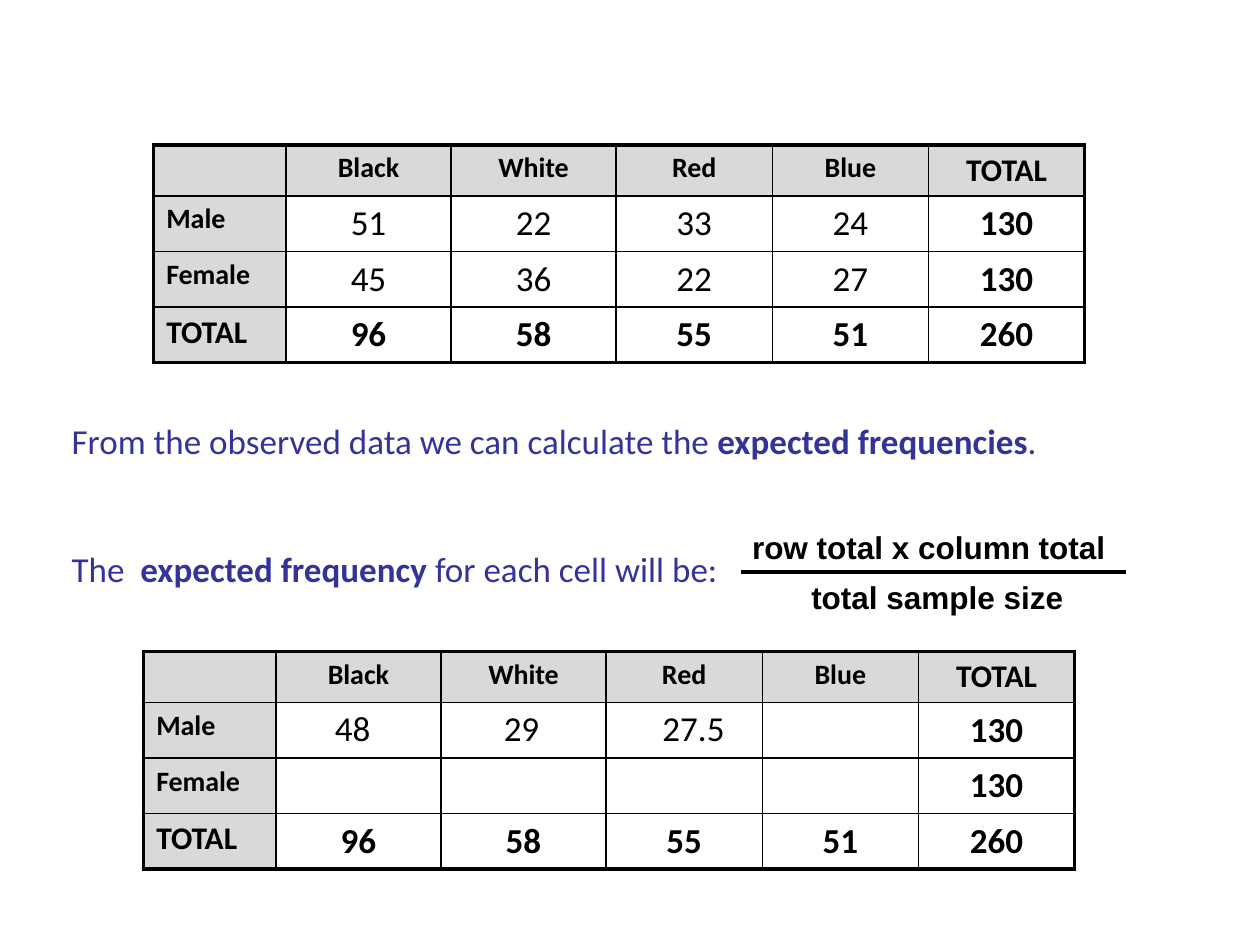
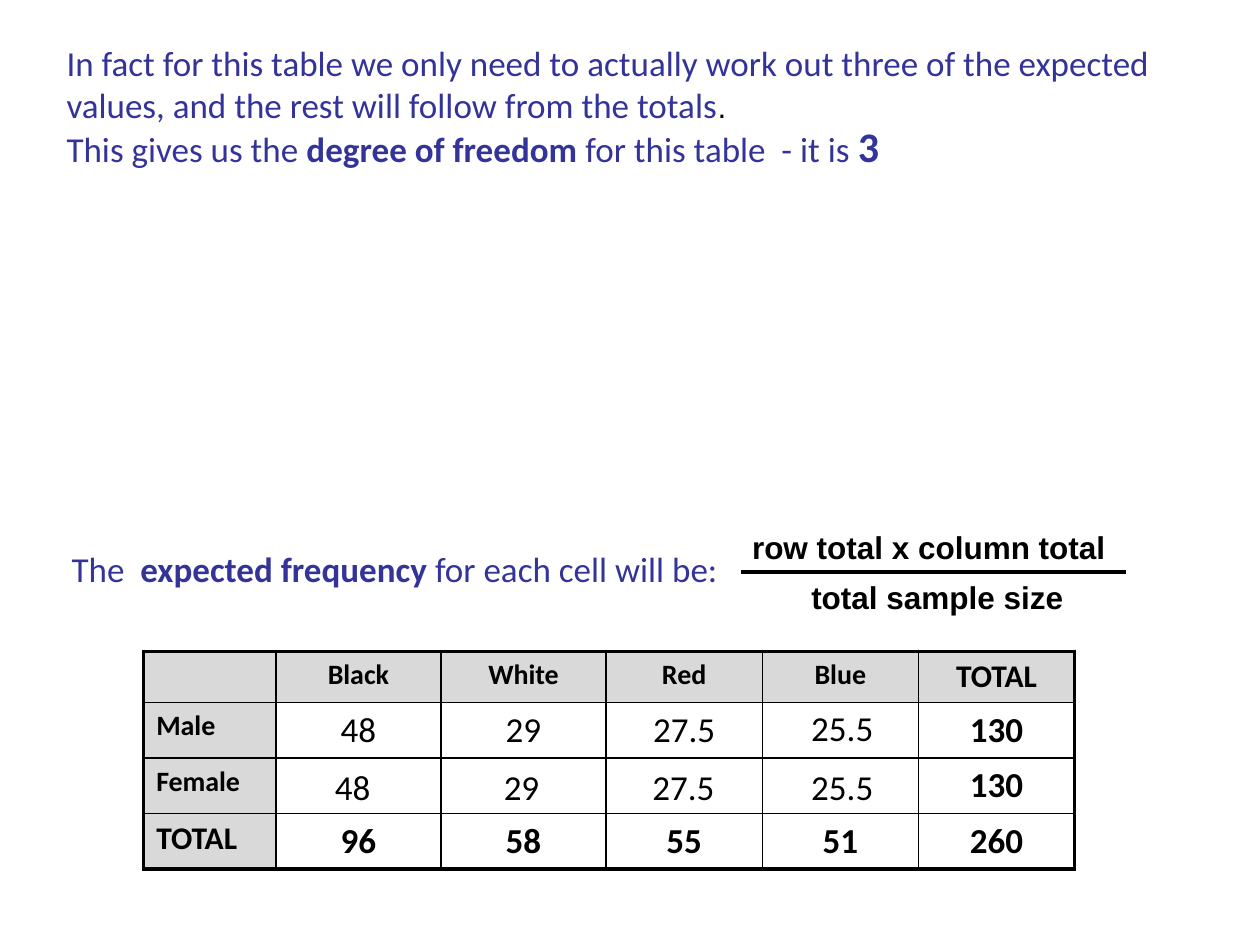
from dataclasses import dataclass
from typing import NamedTuple

from lxml import etree
from pptx import Presentation
from pptx import util as u
from pptx.dml.color import RGBColor
from pptx.enum import shapes, text
from pptx.oxml import ns


# Theme: colours, fonts, type sizes, line widths
@dataclass(frozen=True)
class Theme:
    ink: str = "000000"
    statement: str = "333399"
    header: str = "D9D9D9"
    paper: str = "FFFFFF"
    body_font: str = "Calibri"
    formula_font: str = "Arial"
    label: int = 16
    total_label: int = 18
    formula: int = 18
    body: int = 20
    emphasis: int = 24
    thin: float = 1
    thick: float = 2.25


THEME = Theme()

# The slide is a grid of 100 columns by 75 rows
SLIDE_WIDTH, SLIDE_HEIGHT = u.Inches(10), u.Inches(7.5)


def cols(count: float) -> int:
    return round(SLIDE_WIDTH * count / 100)


def rows(count: float) -> int:
    return round(SLIDE_HEIGHT * count / 75)


class Box(NamedTuple):
    left: float
    top: float
    width: float
    height: float


class Run(NamedTuple):
    words: str
    bold: bool = False
    size: int = THEME.body
    color: str = THEME.statement
    font: str = THEME.body_font


class Note(NamedTuple):
    box: Box
    runs: list[Run]


class Frequencies(NamedTuple):
    left: float
    top: float
    male: list[str]
    female: list[str]


# Content
COLOURS = ["Black", "White", "Red", "Blue"]
COLOUR_TOTALS = ["96", "58", "55", "51"]
COLUMN_WIDTHS = [10.5, 13.1, 13.1, 12.4, 12.4, 12.4]
ROW_HEIGHTS = [4, 4.34, 4.34, 4.34]
EXPECTED_LEFT, EXPECTED_TOP = 11.4, 51.7
MALE_ROW, FEMALE_ROW = 55.6, 60.3
NO_VALUES = [""] * len(COLOURS)

OBSERVED = Frequencies(12.2, 11.5, ["51", "22", "33", "24"], ["45", "36", "22", "27"])
EXPECTED_BLANK = Frequencies(EXPECTED_LEFT, EXPECTED_TOP, NO_VALUES, NO_VALUES)
EXPECTED_MALE = Frequencies(EXPECTED_LEFT, EXPECTED_TOP, ["48", "29", "27.5", ""], NO_VALUES)


def worked_value(value: str, left: float, top: float) -> Note:
    return Note(Box(left, top, 10, 4.3), [Run(value, color=THEME.ink)])


def formula_part(words: str, box: Box) -> Note:
    return Note(box, [Run(words, True, THEME.formula, THEME.ink, THEME.formula_font)])


FORMULA = [
    Note(Box(4.7, 43, 56.3, 4.3), [
        Run("The  "), Run("expected frequency ", True), Run("for each cell will be:")]),
    formula_part("row total x column total", Box(58.7, 41.4, 33.1, 4)),
    formula_part("total sample size", Box(63.4, 45.4, 29.9, 4)),
]
FRACTION_BAR = Box(58.8, 45.4, 30.6, 0)

OBSERVED_NOTES = [
    Note(Box(4.7, 32.8, 95.3, 4.3), [
        Run("From the observed data we can calculate the "),
        Run("expected frequencies", True), Run(".")]),
    worked_value("48", 25.6, MALE_ROW),
    worked_value("29", 39, MALE_ROW),
    worked_value("27.5", 51.6, MALE_ROW),
]
FREEDOM_NOTES = [
    worked_value("48", 25.6, FEMALE_ROW),
    worked_value("29", 39, FEMALE_ROW),
    worked_value("27.5", 50.8, FEMALE_ROW),
    Note(Box(4.3, 2.8, 90.6, 7.7), [
        Run("In fact for this table we only need to actually work out three of the "
            "expected values, and the rest will follow from the totals"),
        Run(".", size=THEME.formula, color=THEME.ink, font=THEME.formula_font)]),
    Note(Box(4.3, 9.1, 90.6, 5), [
        Run("This gives us the"), Run(" degree of freedom", True),
        Run(" for this table  - it is "), Run("3", True, THEME.emphasis)]),
    worked_value("25.5", 63.4, MALE_ROW),
    worked_value("25.5", 63.4, FEMALE_ROW),
]


# Text
def style_run(run, look: Run) -> None:
    run.font.name = look.font
    run.font.size = u.Pt(look.size)
    run.font.bold = look.bold
    run.font.color.rgb = RGBColor.from_string(look.color)


def draw_note(parent, note: Note) -> None:
    box = note.box
    frame = parent.add_textbox(
        cols(box.left), rows(box.top), cols(box.width), rows(box.height)).text_frame
    frame.word_wrap = True
    frame.auto_size = text.MSO_AUTO_SIZE.SHAPE_TO_FIT_TEXT
    for look in note.runs:
        run = frame.paragraphs[0].add_run()
        run.text = look.words
        style_run(run, look)


# Frequency table
def set_borders(cell, widths: dict[str, float]) -> None:
    properties = cell._tc.get_or_add_tcPr()
    for position, side in enumerate("LRTB"):
        line = etree.Element(ns.qn(f"a:ln{side}"), w=str(u.Pt(widths[side])))
        fill = etree.SubElement(line, ns.qn("a:solidFill"))
        etree.SubElement(fill, ns.qn("a:srgbClr"), val=THEME.ink)
        properties.insert(position, line)


def draw_table(slide, data: Frequencies) -> None:
    values = [
        ["", *COLOURS, "TOTAL"],
        ["Male", *data.male, "130"],
        ["Female", *data.female, "130"],
        ["TOTAL", *COLOUR_TOTALS, "260"],
    ]
    last_row, last_col = len(ROW_HEIGHTS) - 1, len(COLUMN_WIDTHS) - 1
    table = slide.shapes.add_table(
        last_row + 1, last_col + 1, cols(data.left), rows(data.top),
        cols(sum(COLUMN_WIDTHS)), rows(sum(ROW_HEIGHTS))).table
    table.first_row = table.horz_banding = False
    for column, width in zip(table.columns, COLUMN_WIDTHS):
        column.width = cols(width)
    for row, height in zip(table.rows, ROW_HEIGHTS):
        row.height = rows(height)

    for r, row_values in enumerate(values):
        for c, value in enumerate(row_values):
            cell = table.cell(r, c)
            is_label = r == 0 or c == 0
            if is_label:
                cell.fill.solid()
                cell.fill.fore_color.rgb = RGBColor.from_string(THEME.header)
            else:
                cell.fill.background()
            outer = {"L": c == 0, "R": c == last_col, "T": r == 0, "B": r == last_row}
            set_borders(cell, {side: THEME.thick if edge else THEME.thin
                               for side, edge in outer.items()})
            if not value:
                continue
            size = THEME.body
            if is_label:
                size = THEME.total_label if value == "TOTAL" else THEME.label
            bold = is_label or r == last_row or c == last_col
            paragraph = cell.text_frame.paragraphs[0]
            paragraph.text = value
            if c > 0:
                paragraph.alignment = text.PP_ALIGN.CENTER
            style_run(paragraph.runs[0], Run(value, bold, size, THEME.ink))


# Expected frequency formula
def draw_formula(slide) -> None:
    group = slide.shapes.add_group_shape().shapes
    for part in FORMULA:
        draw_note(group, part)
    bar = FRACTION_BAR
    line = group.add_connector(
        shapes.MSO_CONNECTOR.STRAIGHT, cols(bar.left), rows(bar.top),
        cols(bar.left + bar.width), rows(bar.top))
    line.line.color.rgb = RGBColor.from_string(THEME.ink)
    line.line.width = u.Pt(THEME.thick)
    etree.SubElement(line._element.spPr, ns.qn("a:effectLst"))


def draw_slide(deck, tables: list[Frequencies], notes: list[Note]) -> None:
    slide = deck.slides.add_slide(deck.slide_layouts[6])
    slide.background.fill.solid()
    slide.background.fill.fore_color.rgb = RGBColor.from_string(THEME.paper)
    for data in tables:
        draw_table(slide, data)
    draw_formula(slide)
    for note in notes:
        draw_note(slide.shapes, note)


def main() -> None:
    deck = Presentation()
    deck.slide_width, deck.slide_height = SLIDE_WIDTH, SLIDE_HEIGHT
    draw_slide(deck, [EXPECTED_BLANK, OBSERVED], OBSERVED_NOTES)
    draw_slide(deck, [EXPECTED_MALE], FREEDOM_NOTES)
    deck.save("out.pptx")


if __name__ == "__main__":
    main()
